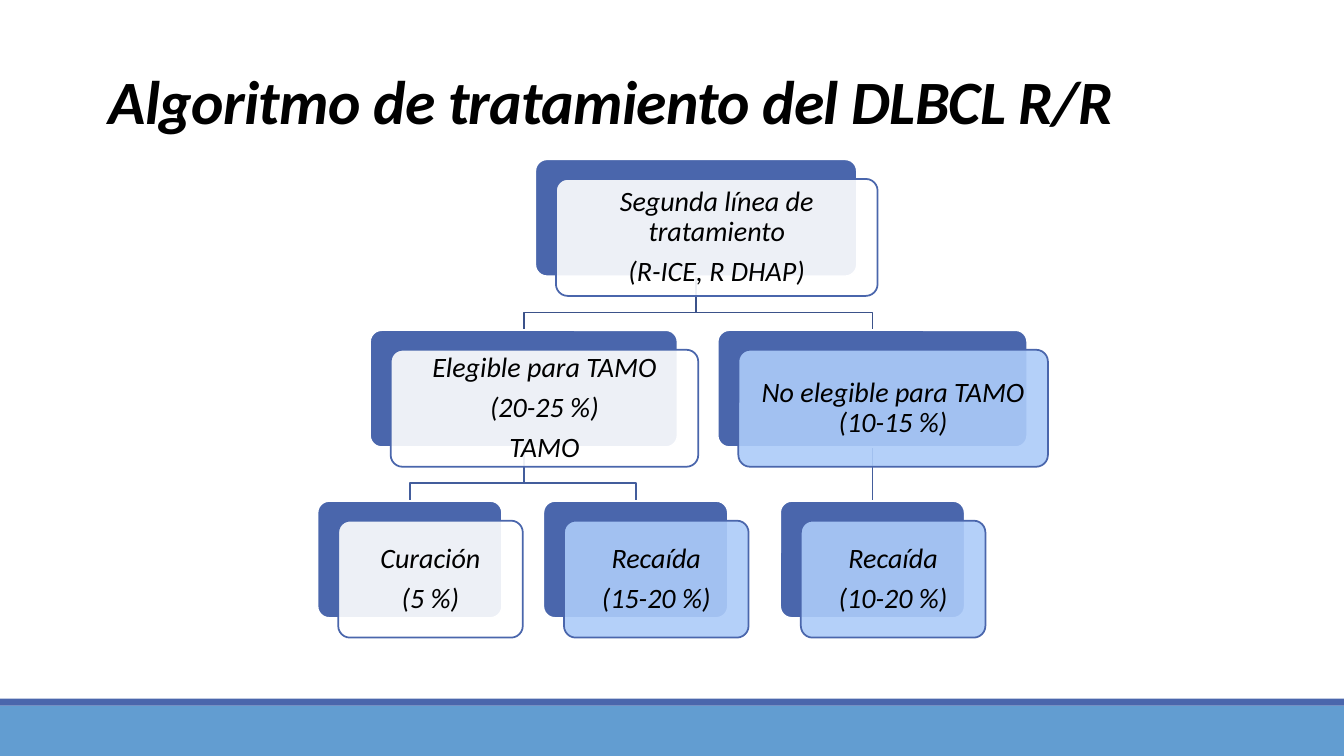
from dataclasses import dataclass

from lxml import etree
from pptx import Presentation
from pptx.dml.color import RGBColor
from pptx.enum.shapes import MSO_CONNECTOR as CONN, MSO_SHAPE as SHAPE
from pptx.enum.text import MSO_ANCHOR as ANCHOR, PP_ALIGN as ALIGN
from pptx.oxml.ns import qn
from pptx.util import Inches, Pt


@dataclass(frozen=True)
class Theme:
    font: str = "Calibri"
    title_size: int = 44
    node_size: int = 20
    line_width: float = 1.25
    ink: str = "000000"
    white: str = "FFFFFF"
    navy: str = "4A66AC"
    sky: str = "629DD1"
    pale: str = "ACCBF9"
    link_top: str = "3B528A"
    link_low: str = "435D9C"


# Tree geometry, in percent of the slide's width (x) or height (y)
TREE_TOP, LEVEL_PITCH, NODE_H = 21.07, 22.6, 15.47
CARD_DX, CARD_DY = 1.54, 2.6
BEND = 4.8
CARD_INSET = Inches(0.11)


@dataclass(frozen=True)
class Node:
    level: int
    x: float
    w: float
    lines: tuple
    fill: str
    parent: str = ""

    @property
    def top(self):
        return TREE_TOP + self.level * LEVEL_PITCH

    @property
    def bottom(self):
        return self.top + NODE_H

    @property
    def center(self):
        return self.x + self.w / 2


def write(tf, lines, *, font, size, color, bold=False, align=ALIGN.LEFT,
          spacing=1.0, after=0, tracking=0):
    """Fill a text frame with one formatted paragraph per line."""
    tf.word_wrap = True
    for i, line in enumerate(lines):
        p = tf.paragraphs[0] if i == 0 else tf.add_paragraph()
        p.alignment, p.line_spacing = align, spacing
        p.space_before, p.space_after = Pt(0), Pt(after)
        r = p.add_run()
        r.text = line
        r.font.name, r.font.size = font, Pt(size)
        r.font.bold, r.font.italic = bold, True
        r.font.color.rgb = RGBColor.from_string(color)
        if tracking:
            r._r.get_or_add_rPr().set("spc", str(round(tracking * 100)))


class SlideBuilder:
    def __init__(self, prs, theme):
        self.prs, self.theme = prs, theme
        self.slide = prs.slides.add_slide(prs.slide_layouts[6])

    def x(self, share):
        return round(self.prs.slide_width * share / 100)

    def y(self, share):
        return round(self.prs.slide_height * share / 100)

    def box(self, x, y, w, h):
        return self.x(x), self.y(y), self.x(w), self.y(h)

    def stroke(self, line, color):
        line.color.rgb = RGBColor.from_string(color)
        line.width = Pt(self.theme.line_width)

    def shape(self, kind, bounds, fill, line=None, alpha=None):
        sp = self.slide.shapes.add_shape(kind, *self.box(*bounds))
        sp.shadow.inherit = False
        sp.fill.solid()
        sp.fill.fore_color.rgb = RGBColor.from_string(fill)
        if alpha:
            clr = sp._element.spPr.find(qn("a:solidFill"))[0]
            etree.SubElement(clr, qn("a:alpha")).set("val", str(alpha * 1000))
        if line:
            self.stroke(sp.line, line)
        else:
            sp.line.fill.background()
        return sp

    def title(self, text, bounds):
        t = self.theme
        tf = self.slide.shapes.add_textbox(*self.box(*bounds)).text_frame
        tf.vertical_anchor = ANCHOR.BOTTOM
        write(tf, [text], font=t.font, size=t.title_size, color=t.ink,
              bold=True, spacing=0.85, tracking=-0.5)

    def elbow(self, parent, child, color):
        bend = self.y(parent.bottom + BEND)
        start, end = self.x(parent.center), self.x(child.center)
        fb = self.slide.shapes.build_freeform(start, self.y(parent.bottom))
        fb.add_line_segments(
            [(start, bend), (end, bend), (end, self.y(child.top))], close=False)
        sp = fb.convert_to_shape()
        sp.shadow.inherit = False
        sp.fill.background()
        self.stroke(sp.line, color)

    def straight(self, parent, child, color):
        cx = self.slide.shapes.add_connector(
            CONN.STRAIGHT, self.x(parent.center), self.y(parent.bottom),
            self.x(child.center), self.y(child.top))
        self.stroke(cx.line, color)
        etree.SubElement(cx._element.spPr, qn("a:effectLst"))
        return cx

    def node(self, node):
        """Draw a solid back plate with a translucent text card; return the plate."""
        t = self.theme
        plate = self.shape(SHAPE.ROUNDED_RECTANGLE,
                           (node.x, node.top, node.w, NODE_H), t.navy, t.white)
        card = self.shape(SHAPE.ROUNDED_RECTANGLE,
                          (node.x + CARD_DX, node.top + CARD_DY, node.w, NODE_H),
                          node.fill, t.navy, alpha=90)
        for sp in (plate, card):
            sp.adjustments[0] = 0.1
        tf = card.text_frame
        tf.margin_left = tf.margin_right = CARD_INSET
        tf.margin_top = tf.margin_bottom = CARD_INSET
        tf.vertical_anchor = ANCHOR.MIDDLE
        write(tf, node.lines, font=t.font, size=t.node_size, color=t.ink,
              align=ALIGN.CENTER, spacing=0.9, after=0.35 * t.node_size)
        return plate


def main():
    theme = Theme()
    prs = Presentation()
    prs.slide_width, prs.slide_height = Inches(13.333), Inches(7.5)
    s = SlideBuilder(prs, theme)

    # Footer bands and title
    s.shape(SHAPE.RECTANGLE, (0, 93.33, 100, 6.67), theme.sky)
    s.shape(SHAPE.RECTANGLE, (0, 92.4, 100, 0.93), theme.navy)
    s.title("Algoritmo de tratamiento del DLBCL R/R", (7.35, 8.53, 79.88, 10.27))

    # Treatment tree
    white, pale, leaf_w = theme.white, theme.pale, 13.73
    nodes = {
        "second_line": Node(0, 39.83, 23.93, (
            "Segunda línea de tratamiento", "(R-ICE, R DHAP)"), white),
        "eligible": Node(1, 27.53, 22.88, (
            "Elegible para TAMO", "(20-25 %)", "TAMO"), white, "second_line"),
        "cure": Node(2, 23.63, leaf_w, ("Curación", "(5 %)"), white, "eligible"),
        "relapse": Node(2, 40.43, leaf_w, (
            "Recaída", "(15-20 %)"), pale, "eligible"),
        "not_eligible": Node(1, 53.4, 23.03, (
            "No elegible para TAMO (10-15 %)",), pale, "second_line"),
        "late_relapse": Node(2, 58.05, leaf_w, (
            "Recaída", "(10-20 %)"), pale, "not_eligible"),
    }

    # Links lie behind the boxes; an only child gets a straight one
    parents = [n.parent for n in nodes.values()]
    joins = []
    for name, child in nodes.items():
        if not child.parent:
            continue
        parent = nodes[child.parent]
        color = theme.link_low if parent.level else theme.link_top
        if parents.count(child.parent) == 1:
            joins.append((s.straight(parent, child, color), child.parent, name))
        else:
            s.elbow(parent, child, color)

    # Boxes, then the straight link is joined to its plates
    plates = {name: s.node(node) for name, node in nodes.items()}
    for cx, parent, child in joins:
        cx.begin_connect(plates[parent], 2)
        cx.end_connect(plates[child], 0)

    prs.save("out.pptx")


if __name__ == "__main__":
    main()
